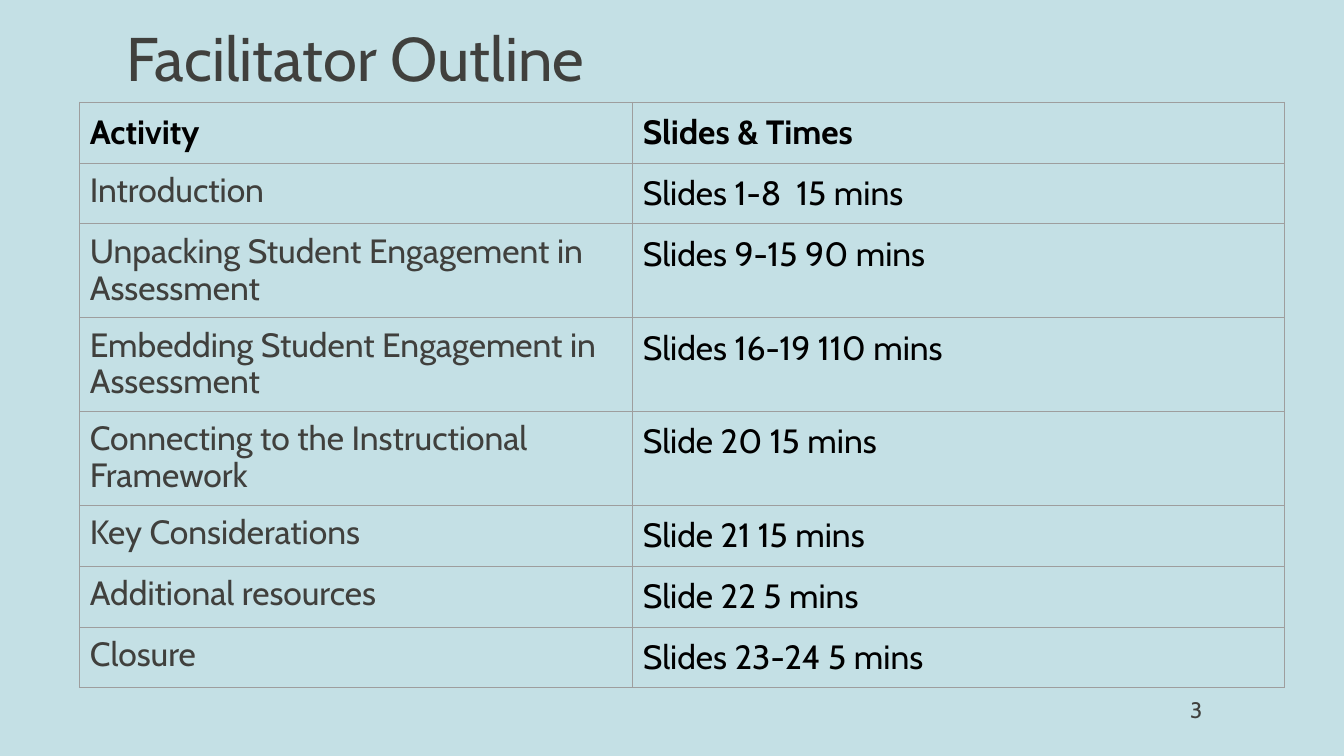
"""Build the facilitator outline slide with its table of activities and times."""
from lxml import etree
from pptx import Presentation
from pptx import util as u
from pptx.dml.color import RGBColor
from pptx.enum import text
from pptx.oxml import ns

BACKGROUND = RGBColor(0xC4, 0xE0, 0xE5)
GREY = RGBColor(0x40, 0x40, 0x3D)
BLACK = RGBColor(0, 0, 0)
BORDER = RGBColor(0x9E, 0x9E, 0x9E)

OUTLINE = [
    ("Activity", "Slides & Times"),
    ("Introduction", "Slides 1-8  15 mins"),
    ("Unpacking Student Engagement in Assessment", "Slides 9-15 90 mins"),
    ("Embedding Student Engagement in Assessment", "Slides 16-19 110 mins"),
    ("Connecting to the Instructional Framework", "Slide 20 15 mins"),
    ("Key Considerations", "Slide 21 15 mins"),
    ("Additional resources", "Slide 22 5 mins"),
    ("Closure", "Slides 23-24 5 mins"),
]
ROW_HEIGHTS = [43.5, 43.5, 67, 67, 67, 43.5, 43.5, 43.5]
COLUMN_WIDTHS = [395, 465.5]


def write(frame, words, spacing, **font):
    """Put one formatted line of text into a text frame."""
    para = frame.paragraphs[0]
    para.line_spacing = spacing
    span = para.add_run()
    span.text = words
    color = font.pop("color")
    for name, value in {"name": "Cabin", **font}.items():
        setattr(span.font, name, value)
    span.font.color.rgb = color


def outline_cell(cell):
    """Draw a thin line on every side of a table cell."""
    properties = cell._tc.get_or_add_tcPr()
    for place, side in enumerate(("lnL", "lnR", "lnT", "lnB")):
        line = etree.Element(ns.qn(f"a:{side}"), w=str(u.Pt(0.75)))
        fill = etree.SubElement(line, ns.qn("a:solidFill"))
        etree.SubElement(fill, ns.qn("a:srgbClr"), val=str(BORDER))
        properties.insert(place, line)


deck = Presentation()
deck.slide_width, deck.slide_height = u.Pt(960), u.Pt(540)
page = deck.slides.add_slide(deck.slide_layouts[6])
page.background.fill.solid()
page.background.fill.fore_color.rgb = BACKGROUND

for words, size, spacing, place in [
    ("Facilitator Outline", 44, 0.9, (83, 15, 790, 57.5)),
    ("3", 16, 1.0, (843, 492.5, 50.5, 29)),
]:
    box = page.shapes.add_textbox(*map(u.Pt, place))
    box.text_frame.word_wrap = True
    box.text_frame.vertical_anchor = text.MSO_ANCHOR.MIDDLE
    write(box.text_frame, words, spacing, size=u.Pt(size), color=GREY)

frame = page.shapes.add_table(
    len(OUTLINE), len(COLUMN_WIDTHS), u.Pt(57), u.Pt(73),
    u.Pt(sum(COLUMN_WIDTHS)), u.Pt(sum(ROW_HEIGHTS)))
table = frame.table
table.first_row = table.horz_banding = False
for column, width in zip(table.columns, COLUMN_WIDTHS):
    column.width = u.Pt(width)
for row, height in zip(table.rows, ROW_HEIGHTS):
    row.height = u.Pt(height)

for r, entries in enumerate(OUTLINE):
    for c, words in enumerate(entries):
        cell = table.cell(r, c)
        cell.fill.background()
        for side in ("left", "right", "top", "bottom"):
            setattr(cell, f"margin_{side}", u.Pt(7.2))
        outline_cell(cell)
        is_activity = r > 0 and c == 0
        write(cell.text_frame, words, 0.9 if is_activity else 1.0,
              size=u.Pt(24), bold=r == 0,
              color=GREY if is_activity else BLACK)

deck.save("out.pptx")
